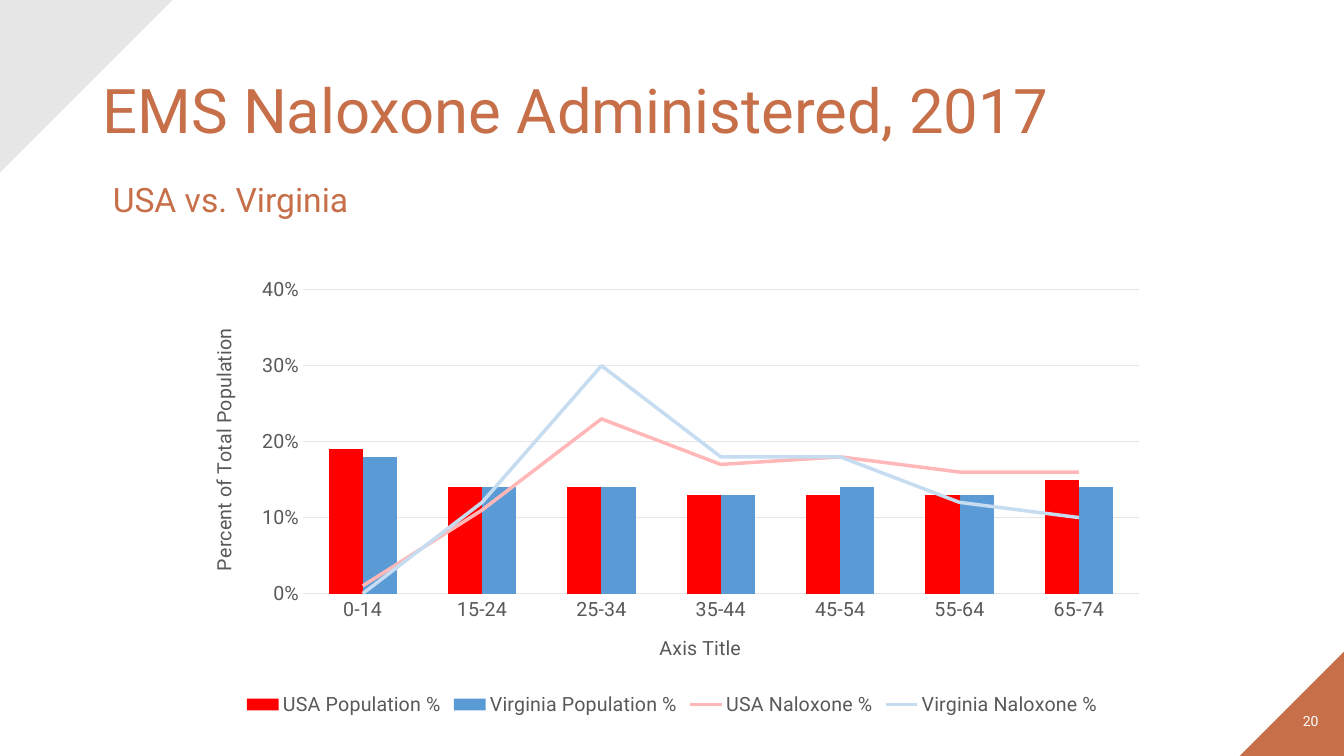
"""Build the slide comparing EMS naloxone use in the USA and Virginia."""
from lxml.etree import SubElement
from pptx import Presentation
from pptx.chart.data import CategoryChartData
from pptx.dml.color import RGBColor
from pptx.enum.chart import XL_CHART_TYPE as ChartType, XL_LEGEND_POSITION as LegendPosition
from pptx.enum.chart import XL_MARKER_STYLE as MarkerStyle, XL_TICK_MARK as TickMark
from pptx.enum.shapes import MSO_SHAPE as Preset
from pptx.enum.text import MSO_ANCHOR as Anchor, PP_ALIGN as Align
from pptx.oxml import parse_xml
from pptx.oxml.ns import nsdecls, qn
from pptx.util import Pt

FONT = "Roboto"
RUST, GRAY, WHITE = "C66F49", "57595B", "FFFFFF"
GRID = "E6E6E7"
WIDTH, HEIGHT = 960, 540

TITLE = "EMS Naloxone Administered, 2017"
SUBTITLE = "USA vs. Virginia"
PAGE = "20"
CATEGORY_TITLE = "Axis Title"
VALUE_TITLE = "Percent of Total Population"
AGES = ["0-14", "15-24", "25-34", "35-44", "45-54", "55-64", "65-74"]
SERIES = [
    ("USA Population %", "FF0000", [0.19, 0.14, 0.14, 0.13, 0.13, 0.13, 0.15]),
    ("Virginia Population %", "5B9BD5", [0.18, 0.14, 0.14, 0.13, 0.14, 0.13, 0.14]),
    ("USA Naloxone %", "FFB7B7", [0.01, 0.11, 0.23, 0.17, 0.18, 0.16, 0.16]),
    ("Virginia Naloxone %", "C6DCF0", [0, 0.12, 0.3, 0.18, 0.18, 0.12, 0.1]),
]
BAR_COUNT = 2
CORNERS = [
    (WIDTH - 74.6, HEIGHT - 74.9, 74.9, 270, RUST),
    (0, -0.5, 123.8, 90, "E7E6E6"),
]
PLOT_AREA = {"x": 0.12, "y": 0.05, "w": 0.86, "h": 0.67}


def color(value):
    return RGBColor.from_string(value)


def style_font(font, size, value):
    font.name, font.size, font.bold = FONT, Pt(size), False
    font.color.rgb = color(value)


def write(frame, text, size=14, value=GRAY, align=None, spacing=None, before=0, inset=None):
    paragraph = frame.paragraphs[0]
    run = paragraph.add_run()
    run.text = text
    style_font(run.font, size, value)
    paragraph.alignment = align
    paragraph.line_spacing = spacing
    paragraph.space_before = Pt(before)
    if inset is not None:
        frame.margin_left = frame.margin_right = Pt(inset)
        frame.margin_top = frame.margin_bottom = Pt(inset)


def place(shape, left, top, width, height):
    shape.left, shape.top = Pt(left), Pt(top)
    shape.width, shape.height = Pt(width), Pt(height)
    shape.text_frame.word_wrap = True
    shape.text_frame.vertical_anchor = Anchor.MIDDLE
    return shape.text_frame


def add_corner(slide, left, top, side, rotation, fill):
    shape = slide.shapes.add_shape(Preset.RIGHT_TRIANGLE, Pt(left), Pt(top), Pt(side), Pt(side))
    shape.rotation = rotation
    shape.shadow.inherit = False
    shape.fill.solid()
    shape.fill.fore_color.rgb = color(fill)
    shape.line.fill.background()


def move_to_lines(chart):
    bars = chart.element.find(".//" + qn("c:barChart"))
    lines = parse_xml(
        f'<c:lineChart {nsdecls("c")}><c:grouping val="standard"/>'
        '<c:varyColors val="0"/></c:lineChart>'
    )
    for series in bars.findall(qn("c:ser"))[BAR_COUNT:]:
        for flag in series.findall(qn("c:invertIfNegative")):
            series.remove(flag)
        lines.append(series)
    SubElement(lines, qn("c:marker")).set("val", "1")
    for axis in bars.findall(qn("c:axId")):
        SubElement(lines, qn("c:axId")).set("val", axis.get("val"))
    bars.addnext(lines)


def set_plot_area(chart):
    plot_area = chart.element.find(".//" + qn("c:plotArea"))
    layout = plot_area.find(qn("c:layout"))
    if layout is None:
        layout = parse_xml(f'<c:layout {nsdecls("c")}/>')
        plot_area.insert(0, layout)
    manual = SubElement(layout, qn("c:manualLayout"))
    settings = {"layoutTarget": "inner", "xMode": "edge", "yMode": "edge", **PLOT_AREA}
    for name, setting in settings.items():
        SubElement(manual, qn("c:" + name)).set("val", str(setting))


def style_axis(axis, title):
    axis.major_tick_mark = axis.minor_tick_mark = TickMark.NONE
    style_font(axis.tick_labels.font, 14, GRAY)
    write(axis.axis_title.text_frame, title)


def style_line(line, value, width):
    line.color.rgb = color(value)
    line.width = Pt(width)


def add_chart(slide):
    data = CategoryChartData(number_format="0%")
    data.categories = AGES
    for name, _, values in SERIES:
        data.add_series(name, values)
    chart = slide.shapes.add_chart(
        ChartType.COLUMN_CLUSTERED, Pt(133.2), Pt(190.8), Pt(694), Pt(324), data
    ).chart
    style_font(chart.font, 14, GRAY)
    chart.has_title = False
    chart.has_legend = True
    chart.legend.position = LegendPosition.BOTTOM
    chart.legend.include_in_layout = False
    style_font(chart.legend.font, 14, GRAY)

    category_axis, value_axis = chart.category_axis, chart.value_axis
    style_axis(category_axis, CATEGORY_TITLE)
    style_line(category_axis.format.line, GRID, 0.75)
    style_axis(value_axis, VALUE_TITLE)
    value_axis.format.line.fill.background()
    value_axis.minimum_scale, value_axis.maximum_scale = 0, 0.4
    value_axis.major_unit = 0.1
    value_axis.tick_labels.number_format = "0%"
    value_axis.tick_labels.number_format_is_linked = False
    style_line(value_axis.major_gridlines.format.line, GRID, 0.75)

    move_to_lines(chart)
    set_plot_area(chart)
    bar_plot, line_plot = chart.plots
    bar_plot.gap_width, bar_plot.overlap = 150, 0
    bar_plot.vary_by_categories = False
    for series, (_, value, _) in zip(bar_plot.series, SERIES):
        series.format.fill.solid()
        series.format.fill.fore_color.rgb = color(value)
    for series, (_, value, _) in zip(line_plot.series, SERIES[BAR_COUNT:]):
        style_line(series.format.line, value, 2.5)
        series.marker.style = MarkerStyle.NONE
        series.smooth = False


def main():
    presentation = Presentation()
    presentation.slide_width, presentation.slide_height = Pt(WIDTH), Pt(HEIGHT)
    slide = presentation.slides.add_slide(presentation.slide_layouts[5])
    for corner in CORNERS:
        add_corner(slide, *corner)

    title = place(slide.shapes.title, 66, 28.8, 828, 104.4)
    write(title, TITLE, size=44, value=RUST, align=Align.LEFT, spacing=0.9)
    page = place(slide.shapes.add_textbox(0, 0, 0, 0), 894.2, 500.4, 54.7, 28.8)
    write(page, PAGE, size=10, value=WHITE, align=Align.RIGHT)
    add_chart(slide)
    subtitle = place(slide.shapes.add_textbox(0, 0, 0, 0), 69.8, 112.3, 540, 58.3)
    write(subtitle, SUBTITLE, size=24, value=RUST, spacing=Pt(30), before=8, inset=10.8)
    presentation.save("out.pptx")


if __name__ == "__main__":
    main()
